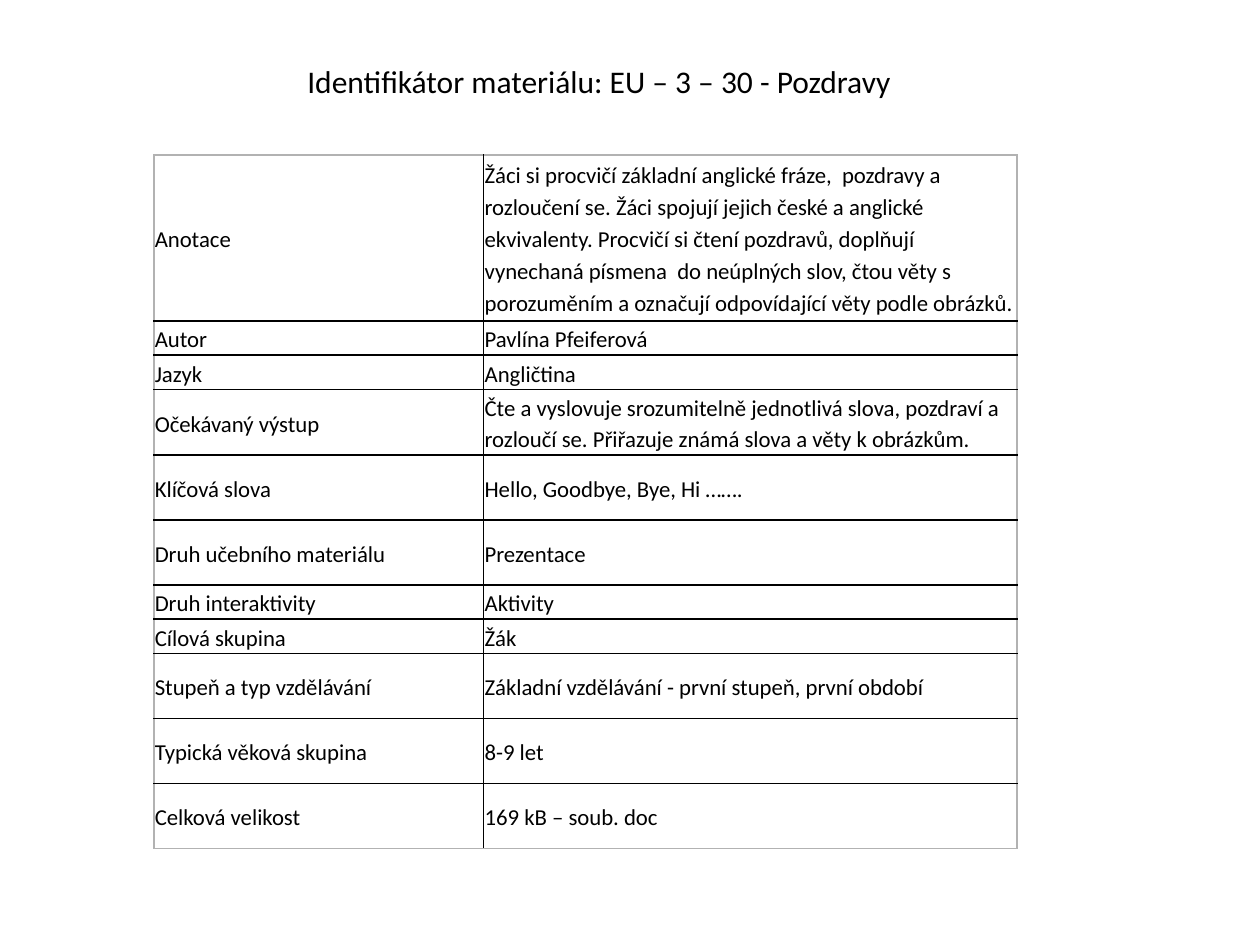
"""Build a slide with the identification table of a teaching material."""
from lxml import etree
from pptx import Presentation
from pptx.dml.color import RGBColor
from pptx.enum.text import MSO_ANCHOR, MSO_AUTO_SIZE, PP_ALIGN
from pptx.oxml.ns import qn
from pptx.util import Cm, Pt

MIDDLE = MSO_ANCHOR.MIDDLE
TOP = MSO_ANCHOR.TOP
NO_AUTOSIZE = MSO_AUTO_SIZE.NONE
CENTER = PP_ALIGN.CENTER
LEFT = PP_ALIGN.LEFT

COLORS = {"text": "000000", "inner": "000000", "outer": "B2B2B2"}
TITLE_ONLY = 5
TALL, SINGLE, DOUBLE = 3.35, 0.69, 1.31
COLUMN_WIDTHS = (6.65, 10.75)
ROWS = [
    ("Anotace", "Žáci si procvičí základní anglické fráze,  pozdravy a rozloučení se. "
     "Žáci spojují jejich české a anglické ekvivalenty. Procvičí si čtení pozdravů, "
     "doplňují vynechaná písmena  do neúplných slov, čtou věty s porozuměním "
     "a označují odpovídající věty podle obrázků.", TALL),
    ("Autor", "Pavlína Pfeiferová", SINGLE),
    ("Jazyk", "Angličtina", SINGLE),
    ("Očekávaný výstup", "Čte a vyslovuje srozumitelně jednotlivá slova, pozdraví "
     "a rozloučí se. Přiřazuje známá slova a věty k obrázkům.", DOUBLE),
    ("Klíčová slova", "Hello, Goodbye, Bye, Hi …….", DOUBLE),
    ("Druh učebního materiálu", "Prezentace", DOUBLE),
    ("Druh interaktivity", "Aktivity", SINGLE),
    ("Cílová skupina", "Žák", SINGLE),
    ("Stupeň a typ vzdělávání", "Základní vzdělávání - první stupeň, první období", DOUBLE),
    ("Typická věková skupina", "8-9 let", DOUBLE),
    ("Celková velikost", "169 kB – soub. doc", DOUBLE),
]


def write(para, text, size, **layout):
    for name, value in layout.items():
        setattr(para, name, value)
    span = para.add_run()
    span.text = text
    for name, value in {"name": "Calibri", "size": Pt(size), "bold": False}.items():
        setattr(span.font, name, value)
    span.font.color.rgb = RGBColor.from_string(COLORS["text"])


def draw_borders(cell, edges):
    properties = cell._tc.get_or_add_tcPr()
    for position, (side, is_outer) in enumerate(edges.items()):
        line = etree.Element(qn(f"a:ln{side}"), w=str(Pt(1)))
        fill = etree.SubElement(line, qn("a:solidFill"))
        color = COLORS["outer" if is_outer else "inner"]
        etree.SubElement(fill, qn("a:srgbClr"), val=color)
        properties.insert(position, line)


deck = Presentation()
deck.slide_width, deck.slide_height = Cm(25.4), Cm(19.05)
page = deck.slides.add_slide(deck.slide_layouts[TITLE_ONLY])

title = page.shapes.title
title_box = {"left": Cm(3.3), "top": Cm(1.12), "width": Cm(17), "height": Cm(1.02)}
for name, value in title_box.items():
    setattr(title, name, value)
title_frame = {"word_wrap": True, "auto_size": NO_AUTOSIZE, "vertical_anchor": TOP,
               "margin_left": Cm(0.81)}
for name, value in title_frame.items():
    setattr(title.text_frame, name, value)
write(title.text_frame.paragraphs[0], "Identifikátor materiálu: EU – 3 – 30 - Pozdravy", 18,
      alignment=CENTER)

table_height = sum(height for _, _, height in ROWS)
table = page.shapes.add_table(len(ROWS), len(COLUMN_WIDTHS), Cm(3.1), Cm(3.12),
                              Cm(sum(COLUMN_WIDTHS)), Cm(table_height)).table
table.first_row = table.horz_banding = False
for column, width in zip(table.columns, COLUMN_WIDTHS):
    column.width = Cm(width)

cell_format = {"vertical_anchor": MIDDLE}
for side in ("left", "right", "top", "bottom"):
    cell_format[f"margin_{side}"] = Cm(0.02)

last_row, last_column = len(ROWS) - 1, len(COLUMN_WIDTHS) - 1
for row, (label, content, height) in enumerate(ROWS):
    table.rows[row].height = Cm(height)
    for column, text in enumerate((label, content)):
        cell = table.cell(row, column)
        for name, value in cell_format.items():
            setattr(cell, name, value)
        cell.fill.background()
        draw_borders(cell, {"L": column == 0, "R": column == last_column,
                            "T": row == 0, "B": row == last_row})
        write(cell.text_frame.paragraphs[0], text, 13, alignment=LEFT, line_spacing=1.15)

deck.save("out.pptx")
